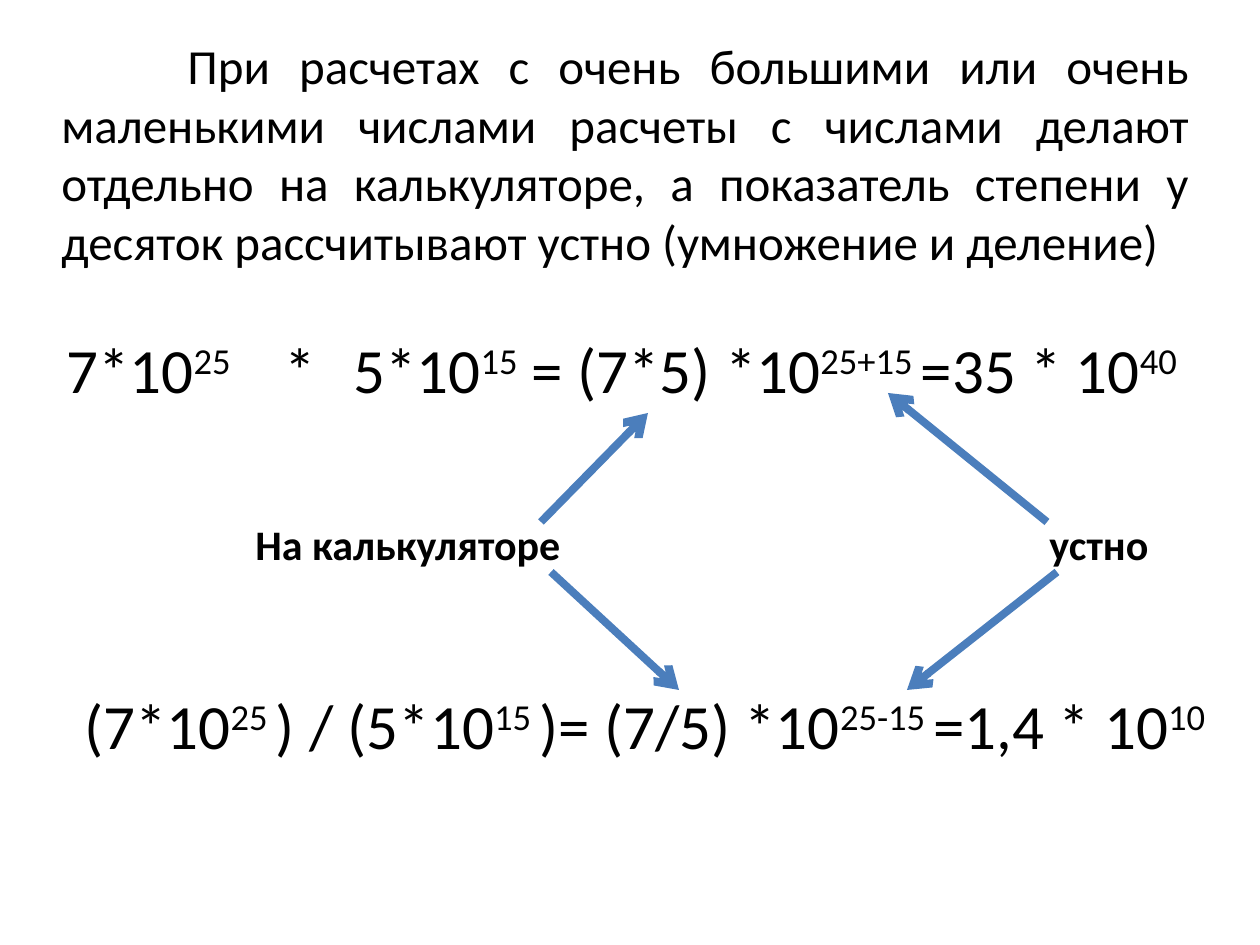
from lxml.etree import SubElement as Sub
from pptx import Presentation
from pptx.dml.color import RGBColor
from pptx.enum.shapes import MSO_CONNECTOR as Conn
from pptx.enum.text import MSO_AUTO_SIZE as Auto, PP_ALIGN as Align
from pptx.oxml.ns import qn
from pptx.util import Emu, Pt

BLACK = RGBColor(0, 0, 0)
BLUE = RGBColor(0x4B, 0x7E, 0xBC)


def px(num):
    return Emu(num * 914400 // 126)


class Page:
    """Holds the text and line style and the current slide."""

    font = "Calibri"
    ink = BLACK
    line = BLUE
    width = Pt(4.5)

    def __init__(self, deck):
        self.slide = deck.slides.add_slide(deck.slide_layouts[6])

    def box(self, area, wrap=False):
        frame = self.slide.shapes.add_textbox(*map(px, area)).text_frame
        frame.word_wrap = wrap
        frame.auto_size = Auto.NONE if wrap else Auto.SHAPE_TO_FIT_TEXT
        return frame.paragraphs[0]

    def run(self, para, text, size, bold=False):
        run = para.add_run()
        run.text = text
        font = run.font
        font.name, font.size, font.bold = self.font, Pt(size), bold
        font.color.rgb = self.ink
        return run

    def body(self, area, text, indent):
        para = self.box(area, wrap=True)
        para.alignment = Align.JUSTIFY
        para._p.get_or_add_pPr().set("indent", str(px(indent)))
        self.run(para, text, 28)

    def label(self, area, text):
        self.run(self.box(area), text, 24, bold=True)

    def sum(self, area, parts, stops=()):
        para = self.box(area)
        if stops:
            tabs = Sub(para._p.get_or_add_pPr(), qn("a:tabLst"))
            for stop in stops:
                Sub(tabs, qn("a:tab"), pos=str(px(stop)), algn="l")
        for base, power in parts:
            self.run(para, base, 36)
            run = self.run(para, power, 36)
            run._r.get_or_add_rPr().set("baseline", "30000")

    def arrow(self, start, end):
        link = self.slide.shapes.add_connector(
            Conn.STRAIGHT, *map(px, start + end))
        link.line.color.rgb = self.line
        link.line.width = self.width
        Sub(link.line._get_or_add_ln(), qn("a:tailEnd"), type="arrow")
        Sub(link._element.spPr, qn("a:effectLst"))


def main():
    deck = Presentation()
    deck.slide_width, deck.slide_height = px(1260), px(945)
    page = Page(deck)

    page.body((49, 29, 1152, 310),
              "При расчетах с очень большими или очень маленькими числами "
              "расчеты с числами делают отдельно на калькуляторе, а "
              "показатель степени у десяток рассчитывают устно "
              "(умножение и деление)", indent=126)

    page.sum((54, 324, 1186, 89),
             [("7*10", "25"), ("\t*\t5*10", "15"), (" = (7*5) *10", "25+15 "),
              ("=35 * 10", "40")], stops=(218, 287))
    page.sum((72, 680, 1188, 89),
             [("(7*10", "25 "), (") / (5*10", "15 "),
              (")= (7/5) *10", "25-15 "), ("=1,4 * 10", "10")])

    page.label((243, 512, 334, 63), "На калькуляторе")
    page.label((1037, 512, 126, 63), "устно")

    high, low, foot = 522, 572, 690
    for start, end in [((541, high), (648, 413)), ((551, low), (679, foot)),
                       ((1047, high), (888, 393)), ((1057, low), (907, foot))]:
        page.arrow(start, end)

    deck.save("out.pptx")


if __name__ == "__main__":
    main()
